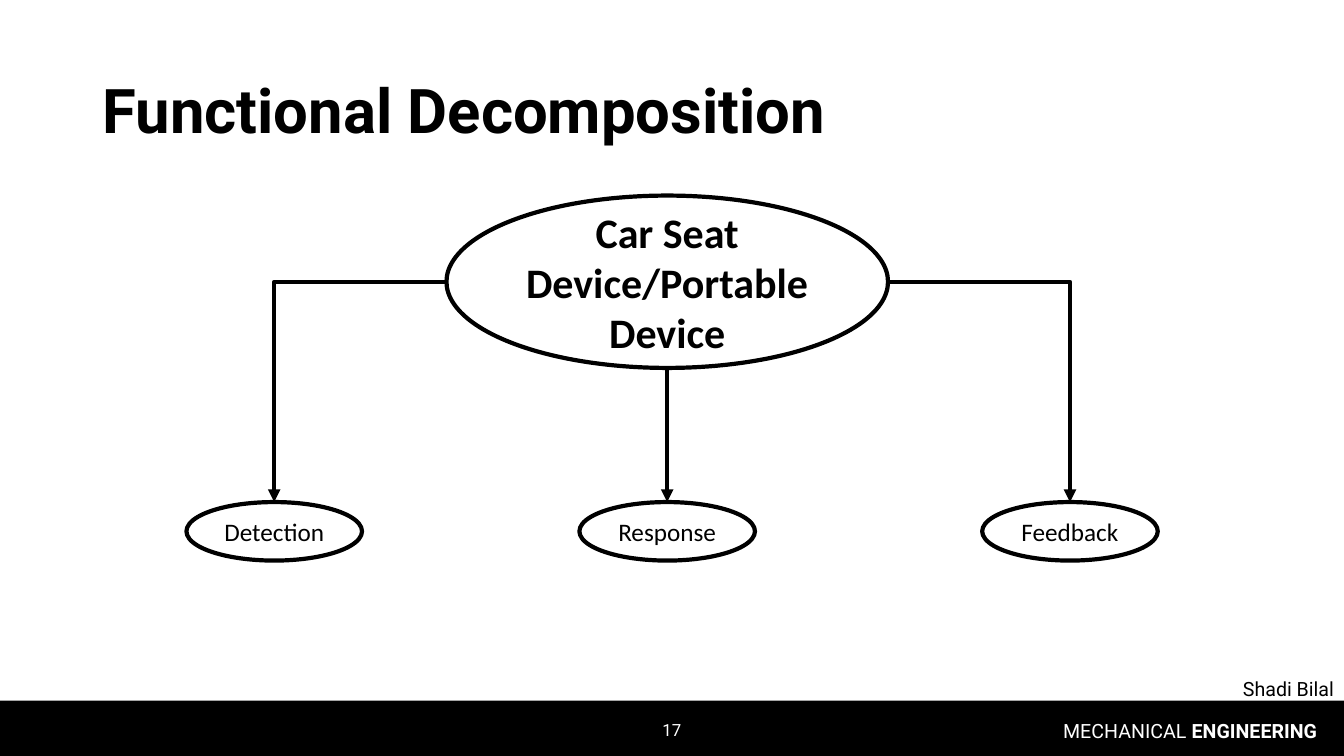
from lxml.etree import SubElement
from pptx import Presentation
from pptx.dml.color import RGBColor
from pptx.enum.shapes import MSO_CONNECTOR, MSO_SHAPE
from pptx.enum.text import MSO_ANCHOR, PP_ALIGN
from pptx.oxml.ns import qn
from pptx.util import Pt

COLORS = {"black": "000000", "white": "FFFFFF"}


def write_text(shape, runs, size, font_name, color, alignment, anchor=MSO_ANCHOR.MIDDLE, line_spacing=1.0):
    frame_format = {
        "word_wrap": True, "vertical_anchor": anchor,
        "margin_left": Pt(7.2), "margin_right": Pt(7.2),
        "margin_top": Pt(3.6), "margin_bottom": Pt(3.6),
    }
    for name, value in frame_format.items():
        setattr(shape.text_frame, name, value)
    paragraph = shape.text_frame.paragraphs[0]
    paragraph.alignment = alignment
    paragraph.line_spacing = line_spacing
    for text, bold in runs:
        run = paragraph.add_run()
        run.text = text
        for name, value in {"size": Pt(size), "name": font_name, "bold": bold}.items():
            setattr(run.font, name, value)
        run.font.color.rgb = RGBColor.from_string(COLORS[color])


def add_oval(left, top, width, height, label, size, bold):
    oval = slide.shapes.add_shape(MSO_SHAPE.OVAL, Pt(left), Pt(top), Pt(width), Pt(height))
    oval.shadow.inherit = False
    oval.fill.background()
    oval.line.width = Pt(3)
    oval.line.color.rgb = RGBColor.from_string(COLORS["black"])
    write_text(oval, [(label, bold)], size, "Calibri", "black", PP_ALIGN.CENTER)
    return oval


presentation = Presentation()
presentation.slide_width = Pt(960)
presentation.slide_height = Pt(540)
slide = presentation.slides.add_slide(presentation.slide_layouts[5])

footer_bar = slide.shapes.add_shape(MSO_SHAPE.RECTANGLE, Pt(0), Pt(500.4), Pt(960), Pt(39.6))
footer_bar.shadow.inherit = False
footer_bar.fill.solid()
footer_bar.fill.fore_color.rgb = RGBColor.from_string(COLORS["black"])
footer_bar.line.fill.background()

title = slide.shapes.title
title_box = {"left": 66, "top": 28.8, "width": 828, "height": 104.4}
for name, value in title_box.items():
    setattr(title, name, Pt(value))
write_text(title, [("Functional Decomposition", True)], 44, "Roboto", "black", PP_ALIGN.LEFT, line_spacing=0.9)

labels = [
    (732, 509.8, 216, 28.8, [("MECHANICAL ", False), ("ENGINEERING", True)], 14, "white", PP_ALIGN.RIGHT, MSO_ANCHOR.TOP, 1.0),
    (708, 481.7, 252, 18, [("Shadi Bilal", False)], 14, "black", PP_ALIGN.RIGHT, MSO_ANCHOR.TOP, 0.9),
    (372, 506.9, 216, 28.8, [("17", False)], 12, "white", PP_ALIGN.CENTER, MSO_ANCHOR.MIDDLE, 1.0),
]
for left, top, width, height, runs, size, color, alignment, anchor, line_spacing in labels:
    box = slide.shapes.add_textbox(Pt(left), Pt(top), Pt(width), Pt(height))
    write_text(box, runs, size, "Roboto", color, alignment, anchor, line_spacing)

device = add_oval(318.9, 139.7, 315.4, 123.1, "Car Seat Device/Portable Device", 30, True)
device_middle = device.top + device.height // 2
device_center = device.left + device.width // 2

functions = [
    ("Detection", 195.9, MSO_CONNECTOR.ELBOW, device.left, device_middle, 2),
    ("Response", 476.6, MSO_CONNECTOR.STRAIGHT, device_center, device.top + device.height, 4),
    ("Feedback", 764.3, MSO_CONNECTOR.ELBOW, device.left + device.width, device_middle, 6),
]
for label, center, kind, start_x, start_y, device_site in functions:
    oval = add_oval(center - 62.7, 358.6, 125.4, 41.8, label, 18, False)
    connector = slide.shapes.add_connector(kind, start_x, start_y, Pt(center), oval.top)
    connection = connector._element.nvCxnSpPr.cNvCxnSpPr
    SubElement(connection, qn("a:stCxn"), id=str(device.shape_id), idx=str(device_site))
    connector.end_connect(oval, 0)
    connector.line.width = Pt(3)
    connector.line.color.rgb = RGBColor.from_string(COLORS["black"])
    properties = connector._element.spPr
    if kind == MSO_CONNECTOR.ELBOW:
        properties.find(qn("a:prstGeom")).set("prst", "bentConnector2")
    SubElement(properties.find(qn("a:ln")), qn("a:tailEnd"), type="triangle")
    SubElement(properties, qn("a:effectLst"))

presentation.save("out.pptx")
